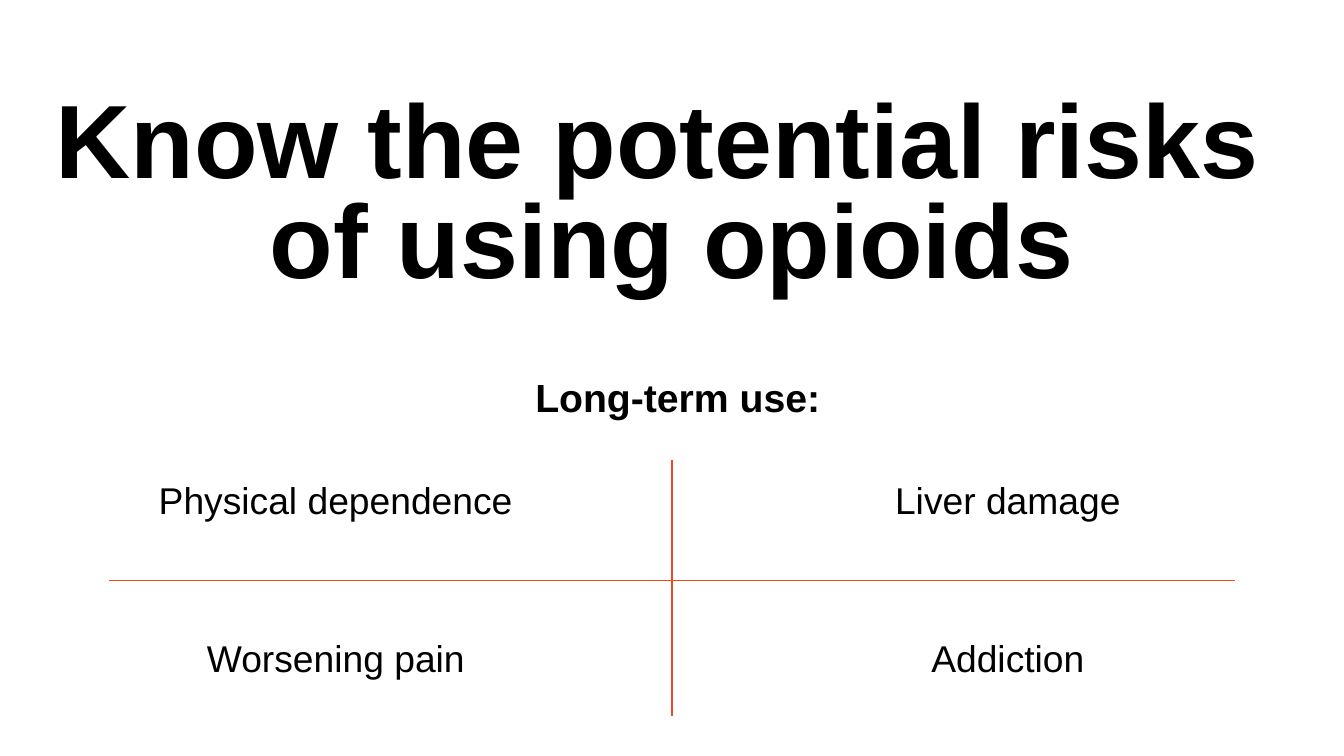
import pptx
import pptx.util
import pptx.oxml.ns
import pptx.dml.color
import pptx.enum.text
import pptx.enum.shapes
import lxml.etree

Cm = pptx.util.Cm
Pt = pptx.util.Pt
COLORS = {"text": "000000", "line": "EF4823"}
RISKS = [
    ["Physical dependence", "Liver damage"],
    ["Worsening pain", "Addiction"],
]


def color(name):
    return pptx.dml.color.RGBColor.from_string(COLORS[name])


def write(shape, text, size, bold=False, top=0.13):
    frame = shape.text_frame
    frame.word_wrap = True
    frame.auto_size = pptx.enum.text.MSO_AUTO_SIZE.NONE
    frame.vertical_anchor = pptx.enum.text.MSO_ANCHOR.TOP
    frame.margin_top = Cm(top)
    frame.text = text
    para = frame.paragraphs[0]
    para.alignment = pptx.enum.text.PP_ALIGN.CENTER
    para.space_before = Pt(0)
    font = para.font
    font.name = "Arial"
    font.size = Pt(size)
    font.bold = bold
    font.color.rgb = color("text")
    return para


def add_text(slide, text, size, left, top, width, height, bold=False):
    box = slide.shapes.add_textbox(Cm(left), Cm(top), Cm(width), Cm(height))
    write(box, text, size, bold)


def add_line(slide, x1, y1, x2, y2):
    line = slide.shapes.add_connector(
        pptx.enum.shapes.MSO_CONNECTOR.STRAIGHT, Cm(x1), Cm(y1), Cm(x2), Cm(y2))
    line.line.color.rgb = color("line")
    line.line.width = Pt(1)
    props = line._element.spPr
    lxml.etree.SubElement(props, pptx.oxml.ns.qn("a:effectLst"))


def add_title(slide, left, top, width, height):
    title = slide.shapes.title
    title.left, title.top = Cm(left), Cm(top)
    title.width, title.height = Cm(width), Cm(height)
    para = write(title, "Know the potential risks \vof using opioids", 74.4, True, 0.16)
    para.line_spacing = 0.8


def add_grid(slide, left, top, width, height):
    cell = width / 2
    step = 3.97
    for row, names in enumerate(RISKS):
        for col, name in enumerate(names):
            add_text(slide, name, 26.6, left + col * cell, top + row * step, cell, 2.5)
    mid = left + cell
    rule = top + 2.72
    add_line(slide, left + 2.74, rule, left + width - 2.74, rule)
    add_line(slide, mid, top - 0.31, mid, top + height)


def main():
    deck = pptx.Presentation()
    deck.slide_width, deck.slide_height = Cm(33.87), Cm(19.05)
    slide = deck.slides.add_slide(deck.slide_layouts[5])
    add_title(slide, 0, 2.31, 33.87, 6.53)
    add_text(slide, "Long-term use:", 28, 11.85, 9.27, 10.46, 1.45, True)
    add_grid(slide, 0, 11.91, 33.87, 6.12)
    deck.save("out.pptx")


if __name__ == "__main__":
    main()
